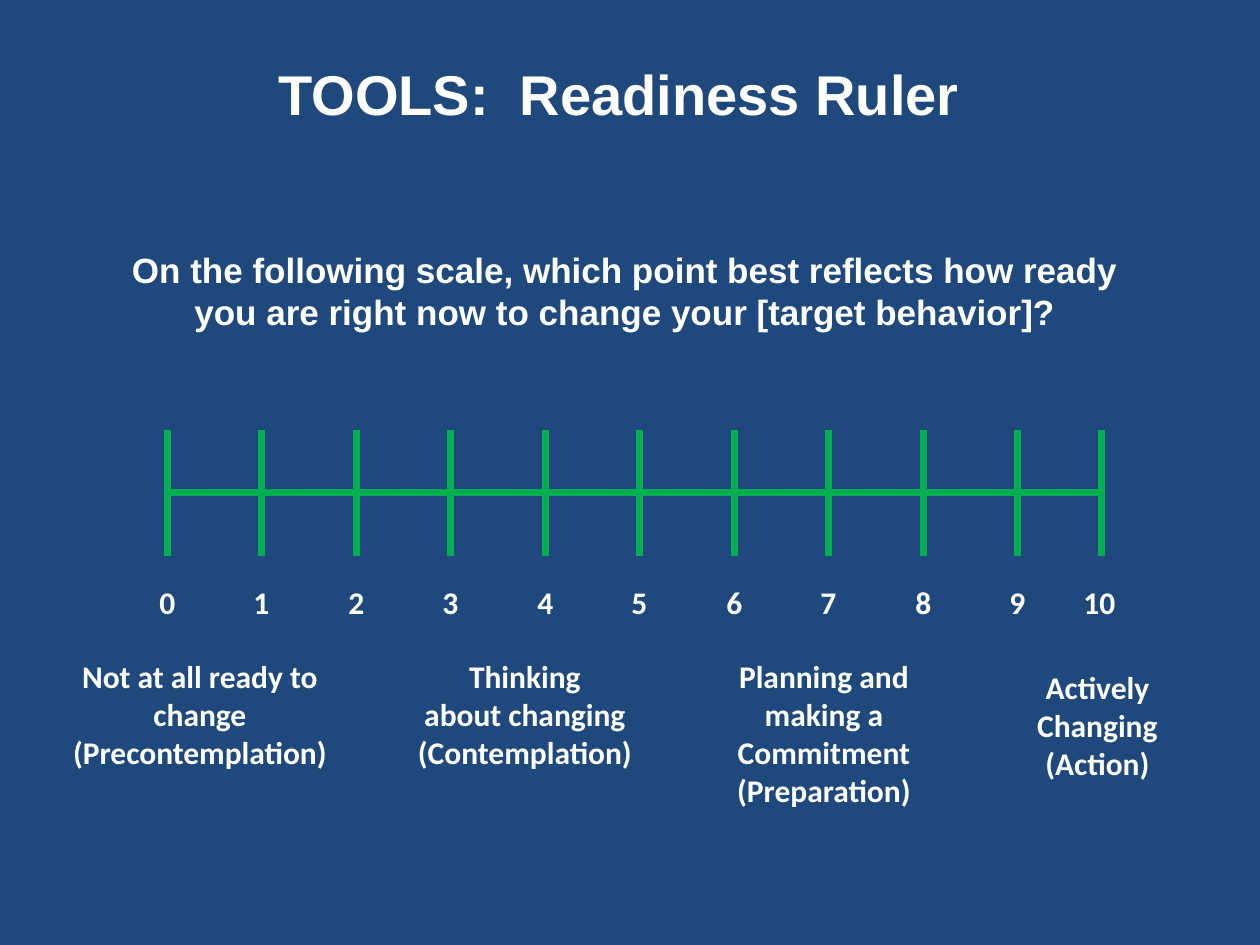
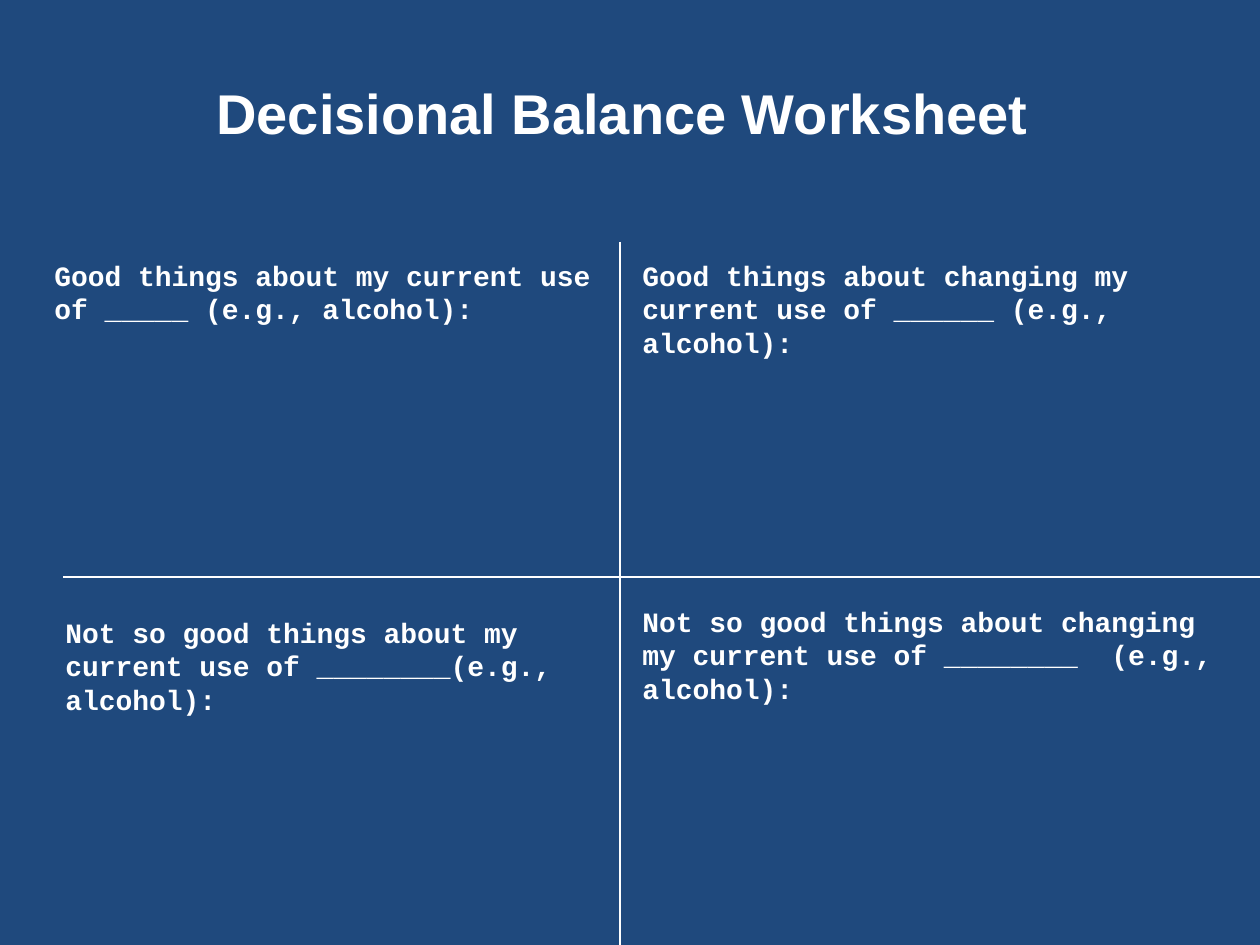
from lxml.etree import SubElement
from pptx import Presentation
from pptx.dml.color import RGBColor
from pptx.enum.shapes import MSO_CONNECTOR
from pptx.enum.text import PP_ALIGN
from pptx.oxml.ns import qn
from pptx.util import Emu, Pt

NAVY, WHITE, GREEN = "1F497D", "FFFFFF", "00B050"
SLIDE_W, SLIDE_H = 1260, 945

RULER_TITLE = ("TOOLS:  Readiness Ruler", (78, 53, 1082, 118))
QUESTION = ("On the following scale, which point best reflects how ready "
            "you are right now to change your [target behavior]?",
            (84, 242, 1082, 136))
STAGES = [
    (["Not at all ready to change", "(Precontemplation)"], (53, 651, 294, 127)),
    (["Thinking", "about changing", "(Contemplation)"], (399, 651, 252, 165)),
    (["Planning and", "making a", "Commitment", "(Preparation)"], (693, 651, 262, 165)),
    (["Actively", "Changing", "(Action)"], (1008, 662, 179, 204)),
]
RULER_Y, TICK_HALF = 493, 63
TICKS = [168 + 189 * i // 2 for i in range(10)] + [1102]
NUMBER_Y, NUMBER_W, NUMBER_H = 577, 53, 50

WORKSHEET_TITLE = ("Decisional Balance Worksheet", (82, 72, 1081, 81))
QUADRANTS = [
    ("Good things about my current use of _____ (e.g., alcohol):", (42, 252, 588, 81)),
    ("Good things about changing my current use of ______ (e.g., alcohol):",
     (630, 252, 588, 81)),
    ("Not so good things about my current use of ________(e.g., alcohol):",
     (53, 609, 592, 84)),
    ("Not so good things about changing my current use of ________  (e.g., alcohol):",
     (630, 598, 604, 115)),
]
DIVIDERS = [((620, 242), (620, SLIDE_H)), ((63, 577), (SLIDE_W, 577))]


def px(n):
    return Emu(round(n * 914400 / 126))


def color(value):
    return RGBColor.from_string(value)


def add_slide(prs):
    s = prs.slides.add_slide(prs.slide_layouts[6])
    s.background.fill.solid()
    s.background.fill.fore_color.rgb = color(NAVY)
    return s


def add_text(s, lines, box, font, size, align=PP_ALIGN.CENTER):
    tf = s.shapes.add_textbox(*map(px, box)).text_frame
    tf.word_wrap = True
    tf.text = lines if isinstance(lines, str) else "\n".join(lines)
    for p in tf.paragraphs:
        p.alignment = align
        for r in p.runs:
            r.font.name, r.font.size, r.font.bold = font, Pt(size), True
            r.font.color.rgb = color(WHITE)


def add_title(s, title):
    add_text(s, *title, "Arial", 32)


def add_line(s, start, end, line_color, width):
    c = s.shapes.add_connector(MSO_CONNECTOR.STRAIGHT, *map(px, start + end))
    c.line.color.rgb = color(line_color)
    c.line.width = Pt(width)
    SubElement(c._element.spPr, qn("a:effectLst"))


def build_ruler(prs):
    s = add_slide(prs)
    add_title(s, RULER_TITLE)
    add_text(s, *QUESTION, "Arial", 20)
    add_line(s, (TICKS[0], RULER_Y), (TICKS[-1], RULER_Y), GREEN, 4)
    for number, x in enumerate(TICKS):
        add_line(s, (x, RULER_Y - TICK_HALF), (x, RULER_Y + TICK_HALF), GREEN, 4)
        label = str(number)
        extra = 10 * (len(label) - 1)
        box = (x - 21 - extra, NUMBER_Y, NUMBER_W + extra, NUMBER_H)
        add_text(s, label, box, "Calibri", 18, PP_ALIGN.LEFT)
    for lines, box in STAGES:
        add_text(s, lines, box, "Calibri", 18)


def build_worksheet(prs):
    s = add_slide(prs)
    add_title(s, WORKSHEET_TITLE)
    for prompt, box in QUADRANTS:
        add_text(s, prompt, box, "Courier New", 16, PP_ALIGN.LEFT)
    for start, end in DIVIDERS:
        add_line(s, start, end, WHITE, 0.75)


def main():
    prs = Presentation()
    prs.slide_width, prs.slide_height = px(SLIDE_W), px(SLIDE_H)
    build_ruler(prs)
    build_worksheet(prs)
    prs.save("out.pptx")


if __name__ == "__main__":
    main()
